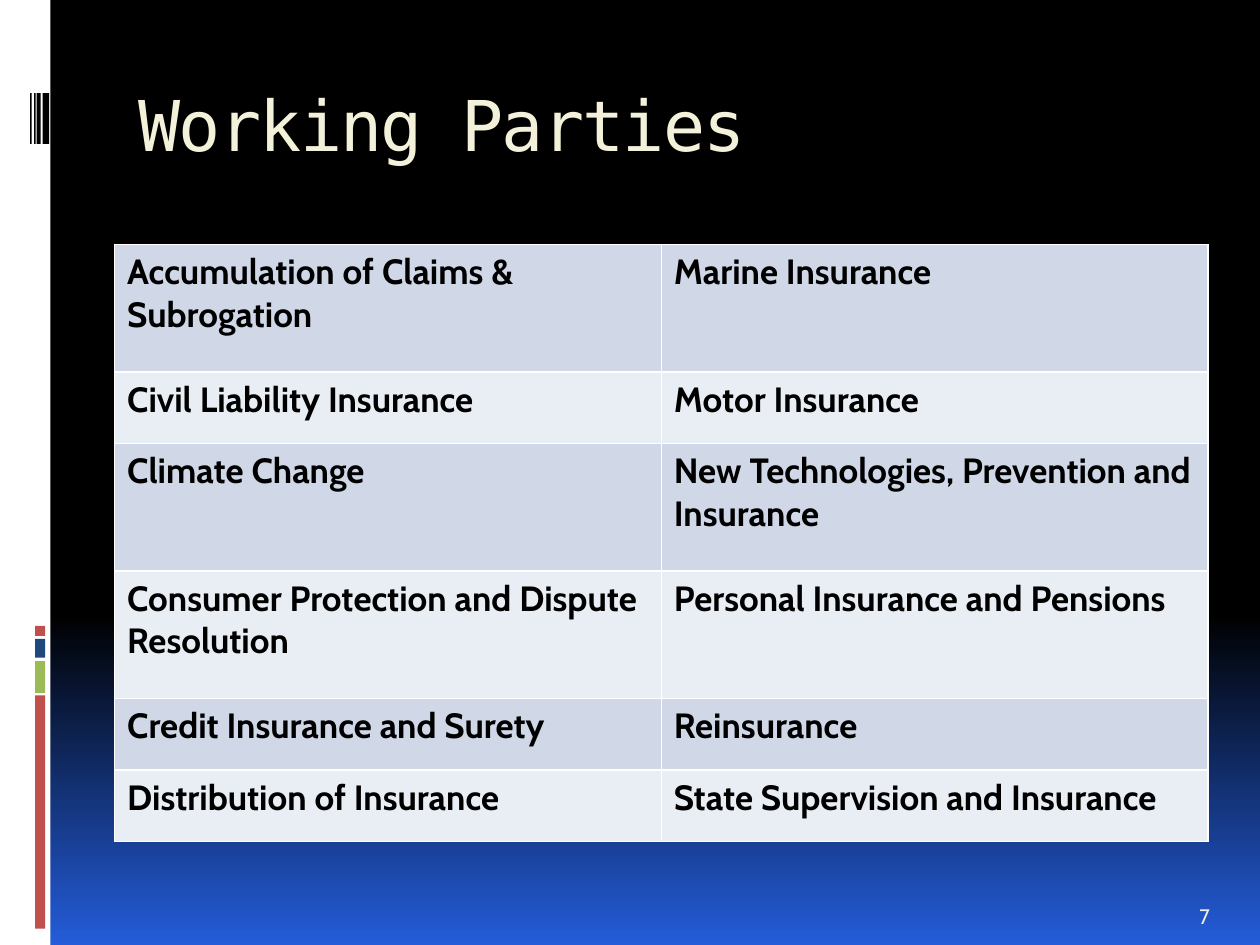
from copy import deepcopy
from typing import NamedTuple

from lxml.etree import SubElement
from pptx import Presentation
from pptx.dml.color import RGBColor
from pptx.enum.shapes import MSO_SHAPE as Preset
from pptx.enum.text import MSO_ANCHOR as Anchor, MSO_AUTO_SIZE as AutoSize, PP_ALIGN as Align
from pptx.oxml.ns import qn
from pptx.util import Cm, Pt


class Bar(NamedTuple):
    left: float
    top: float
    width: float
    height: float
    color: str


class PartyRow(NamedTuple):
    first: str
    second: str
    height: float


SINGLE, DOUBLE = 1.44, 2.57
BANDS = ("D0D8E8", "E9EDF4")

SIDE_BARS = [
    Bar(0, 0, 1.02, 19.05, "FFFFFF"),
    *(Bar(0.71, top, 0.2, height, color) for top, height, color in (
        (14.02, 4.7, "C0504D"),
        (13.33, 0.64, "9BBB59"),
        (12.88, 0.38, "1F497D"),
        (12.62, 0.2, "C0504D"),
    )),
    *(Bar(left, 1.88, width, 1.02, "000000") for left, width in (
        (0.86, 0.13), (0.74, 0.08), (0.69, 0.03), (0.61, 0.03),
    )),
]

PARTY_ROWS = [
    PartyRow("Accumulation of Claims & Subrogation", "Marine Insurance", DOUBLE),
    PartyRow("Civil Liability Insurance", "Motor Insurance", SINGLE),
    PartyRow("Climate Change", "New Technologies, Prevention and Insurance", DOUBLE),
    PartyRow("Consumer Protection and Dispute Resolution", "Personal Insurance and Pensions", DOUBLE),
    PartyRow("Credit Insurance and Surety", "Reinsurance", SINGLE),
    PartyRow("Distribution of Insurance", "State Supervision and Insurance", SINGLE),
]


def rgb(color: str) -> RGBColor:
    return RGBColor.from_string(color)


def add_run(paragraph, text: str, font: str, size: float, color: str, bold: bool = False):
    run = paragraph.add_run()
    run.text = text
    run.font.name = font
    run.font.size = Pt(size)
    run.font.bold = bold
    run.font.color.rgb = rgb(color)
    return run


def paint_background(slide) -> None:
    fill = slide.background.fill
    fill.gradient()
    fill.gradient_angle = 270
    stop_list = slide.element.find(".//" + qn("a:gsLst"))
    stop_list.insert(0, deepcopy(stop_list[0]))
    for stop, (position, color) in zip(
        fill.gradient_stops, ((0, "000000"), (0.65, "000000"), (1, "245CD9"))
    ):
        stop.position = position
        stop.color.rgb = rgb(color)


def draw_bar(slide, bar: Bar) -> None:
    shape = slide.shapes.add_shape(
        Preset.RECTANGLE, Cm(bar.left), Cm(bar.top), Cm(bar.width), Cm(bar.height)
    )
    shape.shadow.inherit = False
    shape.fill.solid()
    shape.fill.fore_color.rgb = rgb(bar.color)
    shape.line.fill.background()


def write_title(slide, text: str) -> None:
    title = slide.shapes.title
    title.left, title.top, title.width, title.height = Cm(2.54), Cm(1.42), Cm(21.59), Cm(2.54)
    frame = title.text_frame
    frame.auto_size = AutoSize.NONE
    frame.vertical_anchor = Anchor.TOP
    frame.margin_top = Cm(0.23)
    paragraph = frame.paragraphs[0]
    paragraph.alignment = Align.LEFT
    run = add_run(paragraph, text, "DejaVu Sans Mono", 40, "F4F1DA")
    run.font._element.set("spc", "-100")


def outline_cell(cell, color: str) -> None:
    properties = cell._tc.get_or_add_tcPr()
    for side in ("lnL", "lnR", "lnT", "lnB"):
        border = SubElement(properties, qn(f"a:{side}"), w=str(Pt(1)))
        SubElement(SubElement(border, qn("a:solidFill")), qn("a:srgbClr"), val=color)


def draw_parties(slide, rows: list[PartyRow]) -> None:
    height = sum(row.height for row in rows)
    table = slide.shapes.add_table(
        len(rows), 2, Cm(2.31), Cm(4.93), Cm(22.04), Cm(height)
    ).table
    for index, row in enumerate(rows):
        table.rows[index].height = Cm(row.height)
        for column, party in enumerate((row.first, row.second)):
            cell = table.cell(index, column)
            outline_cell(cell, "FFFFFF")
            cell.fill.solid()
            cell.fill.fore_color.rgb = rgb(BANDS[index % 2])
            add_run(cell.text_frame.paragraphs[0], party, "Cabin", 20, "000000", bold=True)


def write_page_number(slide, number: str) -> None:
    frame = slide.shapes.add_textbox(Cm(23.93), Cm(17.83), Cm(1.27), Cm(1.02)).text_frame
    frame.word_wrap = True
    frame.vertical_anchor = Anchor.BOTTOM
    add_run(frame.paragraphs[0], number, "Cabin", 12, "EEECE1")


def main() -> None:
    deck = Presentation()
    deck.slide_width, deck.slide_height = Cm(25.4), Cm(19.05)
    slide = deck.slides.add_slide(deck.slide_layouts[5])
    paint_background(slide)
    for bar in SIDE_BARS:
        draw_bar(slide, bar)
    write_title(slide, "Working Parties")
    draw_parties(slide, PARTY_ROWS)
    write_page_number(slide, "7")
    deck.save("out.pptx")


if __name__ == "__main__":
    main()
